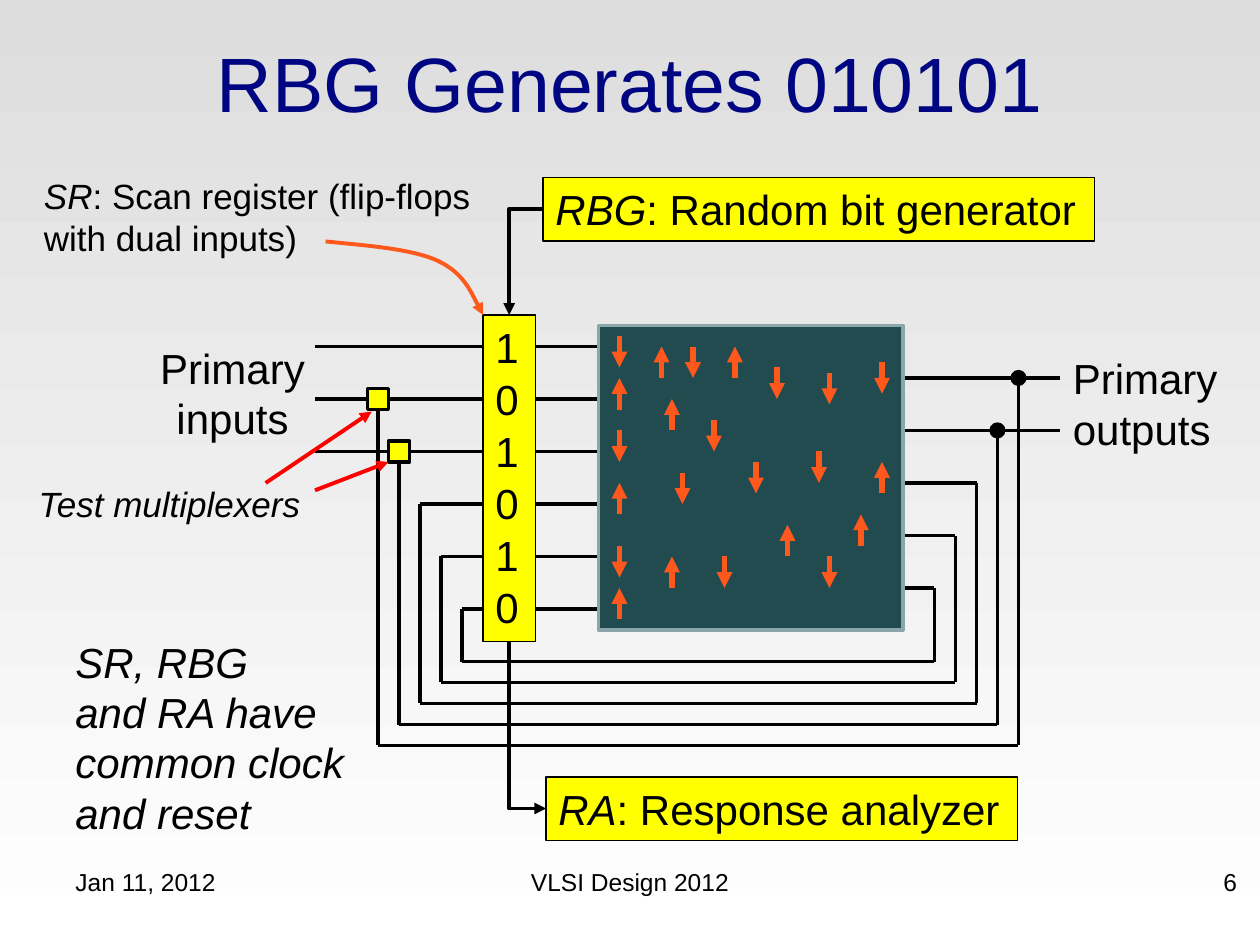
from lxml import etree
from pptx import Presentation
from pptx.dml.color import RGBColor
from pptx.enum import shapes, text
from pptx.oxml.ns import qn
from pptx.util import Cm, Pt

GRID = 2.54 / 12  # the drawing sits on a grid of twelve steps to the inch
BLACK, YELLOW, ORANGE, RED = "000000", "FFFF00", "FF581D", "FF0000"
NAVY, TEAL, GREY = "000681", "224B50", "8AA6A8"
LEFT, CENTER, RIGHT = text.PP_ALIGN.LEFT, text.PP_ALIGN.CENTER, text.PP_ALIGN.RIGHT
color = RGBColor.from_string


def write(shape, lines, size, align=LEFT, font_color=BLACK, grow=True, wrap=False, after=0):
    """Fill a shape with lines; the part of a line before a bar is italic."""
    frame = shape.text_frame
    fit = text.MSO_AUTO_SIZE.SHAPE_TO_FIT_TEXT if grow else text.MSO_AUTO_SIZE.NONE
    frame_format = {"word_wrap": wrap, "auto_size": fit,
                    "vertical_anchor": text.MSO_ANCHOR.TOP}
    for name, value in frame_format.items():
        setattr(frame, name, value)
    for number, line in enumerate(lines):
        paragraph = frame.paragraphs[0] if number == 0 else frame.add_paragraph()
        paragraph.alignment = align
        paragraph.space_after = Pt(after)
        italic_part, _, plain_part = line.rpartition("|")
        for words, italic in ((italic_part, True), (plain_part, False)):
            if words:
                run = paragraph.add_run()
                run.text = words
                run.font.color.rgb = color(font_color)
                font_format = {"name": "Arial", "size": Pt(size), "italic": italic}
                for name, value in font_format.items():
                    setattr(run.font, name, value)


def add_line(start, end, line_color=BLACK, width=2.25, arrow=False, bent=False):
    kind = shapes.MSO_CONNECTOR.ELBOW if bent else shapes.MSO_CONNECTOR.STRAIGHT
    connector = slide.shapes.add_connector(kind, *[Cm(n * GRID) for n in (*start, *end)])
    connector.line.color.rgb = color(line_color)
    connector.line.width = Pt(width)
    properties = connector._element.spPr
    if bent:
        properties.find(qn("a:prstGeom")).set("prst", "bentConnector2")
    if arrow:
        etree.SubElement(properties.find(qn("a:ln")), qn("a:tailEnd"), type="triangle")
    etree.SubElement(properties, qn("a:effectLst"))
    return connector


presentation = Presentation()
presentation.slide_width, presentation.slide_height = Cm(25.4), Cm(19.05)
slide = presentation.slides.add_slide(presentation.slide_layouts[5])

background = slide.background.fill
background.gradient()
background.gradient_angle = 270
for stop, stop_color in zip(background.gradient_stops, ("DDDDDD", "FFFFFF")):
    stop.color.rgb = color(stop_color)

title = slide.shapes.title
title_box = {"left": 1.27, "top": 0.76, "width": 22.86, "height": 1.78}
for name, value in title_box.items():
    setattr(title, name, Cm(value))
write(title, ["RBG Generates 010101"], 44, CENTER, NAVY, grow=False, wrap=True)
title.text_frame.vertical_anchor = text.MSO_ANCHOR.MIDDLE

# Footer
for left, width, words, align in (
    (6, 28, "Jan 11, 2012", LEFT),
    (41, 38, "VLSI Design 2012", CENTER),
    (91, 28, "6", RIGHT),
):
    footer = slide.shapes.add_textbox(*[Cm(n * GRID) for n in (left, 82, width, 6.25)])
    write(footer, [words], 14, align, grow=False, wrap=True)

# Labels
for box, lines, size, align in (
    ((101, 33, 16.3, 10.9), ["Primary", "outputs"], 24, LEFT),
    ((14, 32, 16.3, 10.9), ["Primary", "inputs"], 24, CENTER),
    ((3, 16, 45, 9.3), ["SR|: Scan register (flip-flops", "with dual inputs)"], 20, LEFT),
    ((6, 60, 28.2, 20.6), ["SR, RBG|", "and RA have|", "common clock|", "and reset|"], 24, LEFT),
    ((2.5, 45.4, 27.5, 5.3), ["Test multiplexers|"], 20, LEFT),
):
    label = slide.shapes.add_textbox(*[Cm(n * GRID) for n in box])
    write(label, lines, size, align)

# Scan register inputs and its links to the logic block
for row in range(6):
    y = 33 + 5 * row
    add_line((30 if row < 3 else 34 + 2 * row, y), (46, y))
    add_line((51, y), (57, y))

# Feedback loops, from the outermost to the innermost
for loop in range(5):
    left, right, bottom = 36 + 2 * loop, 97 - 2 * loop, 71 - 2 * loop
    output_y, input_y = 36 + 5 * loop, 38 + 5 * loop
    add_line((86, output_y), (101 if loop < 2 else right, output_y))
    add_line((right, output_y), (right, bottom))
    add_line((left, bottom), (right, bottom))
    add_line((left, input_y), (left, bottom))

# Register, named blocks, multiplexers, junctions and logic block
RECTANGLE, OVAL = shapes.MSO_SHAPE.RECTANGLE, shapes.MSO_SHAPE.OVAL
for kind, box, fill, outline, width, lines, after in (
    (RECTANGLE, (46, 30, 5, 31.1), YELLOW, BLACK, 0.75, "101010", 1),
    (RECTANGLE, (52, 74, 44.9, 6.06), YELLOW, BLACK, 0.75, ["RA|: Response analyzer"], 0),
    (RECTANGLE, (51.72, 16.9, 52.5, 6.06), YELLOW, BLACK, 0.75, ["RBG|: Random bit generator"], 0),
    (RECTANGLE, (35, 37, 2, 2), YELLOW, BLACK, 2, [], 0),
    (RECTANGLE, (37, 42, 2, 2), YELLOW, BLACK, 2, [], 0),
    (OVAL, (96.4, 35.4, 1.2, 1.2), BLACK, BLACK, 2, [], 0),
    (OVAL, (94.4, 40.4, 1.2, 1.2), BLACK, BLACK, 2, [], 0),
    (RECTANGLE, (57, 31, 29, 29), TEAL, GREY, 2, [], 0),
):
    shape = slide.shapes.add_shape(kind, *[Cm(n * GRID) for n in box])
    shape.shadow.inherit = False
    shape.fill.solid()
    shape.fill.fore_color.rgb = color(fill)
    shape.line.color.rgb = color(outline)
    shape.line.width = Pt(width)
    if lines:
        write(shape, lines, 24, wrap=after > 0, after=after)

# Generator to register, and register to analyzer
add_line((51.72, 19.92), (48.5, 30), arrow=True, bent=True)
analyzer_link = add_line((58.2, 67.3), (42.3, 70.8), arrow=True, bent=True)
analyzer_link._element.spPr.find(qn("a:xfrm")).set("rot", "16200000")

# Pointers from the labels
add_line((25.3, 46), (35.4, 39.2), RED, arrow=True)
add_line((30, 46.7), (37, 44), RED, arrow=True)

curve = [(31, 23), (35, 23.4), (39.1, 23.7), (41.6, 24.8), (44.2, 26), (46, 30), (46, 30)]
points = [(Cm(x * GRID), Cm(y * GRID)) for x, y in curve]
builder = slide.shapes.build_freeform(*points[0])
builder.add_line_segments(points[1:], close=False)
pointer = builder.convert_to_shape()
pointer.shadow.inherit = False
pointer.fill.background()
pointer.line.color.rgb = color(ORANGE)
pointer.line.width = Pt(2.25)
properties = pointer._element.spPr
etree.SubElement(properties.find(qn("a:ln")), qn("a:tailEnd"), type="triangle")
segments = list(properties.iter(qn("a:lnTo")))
outline = segments[0].getparent()
for first in range(0, len(segments), 3):
    bezier = etree.SubElement(outline, qn("a:cubicBezTo"))
    for segment in segments[first:first + 3]:
        bezier.append(segment[0])
        outline.remove(segment)

# Signal transitions inside the logic block: falling from a top, rising from a bottom
falling = [(59, 32), (59, 41), (59, 52), (66, 33), (74, 35), (65, 45), (78, 43), (69, 53),
           (79, 53), (72, 44), (84, 34.5), (68, 40), (79, 35.5)]
rising = [(59, 39), (59, 49), (59, 59), (64, 41), (75, 53), (64, 56), (82, 52), (70, 36),
          (84, 47), (63, 36)]
for starts, step in ((falling, 3), (rising, -3)):
    for x, y in starts:
        add_line((x, y), (x, y + step), ORANGE, 3, arrow=True)

presentation.save("out.pptx")
